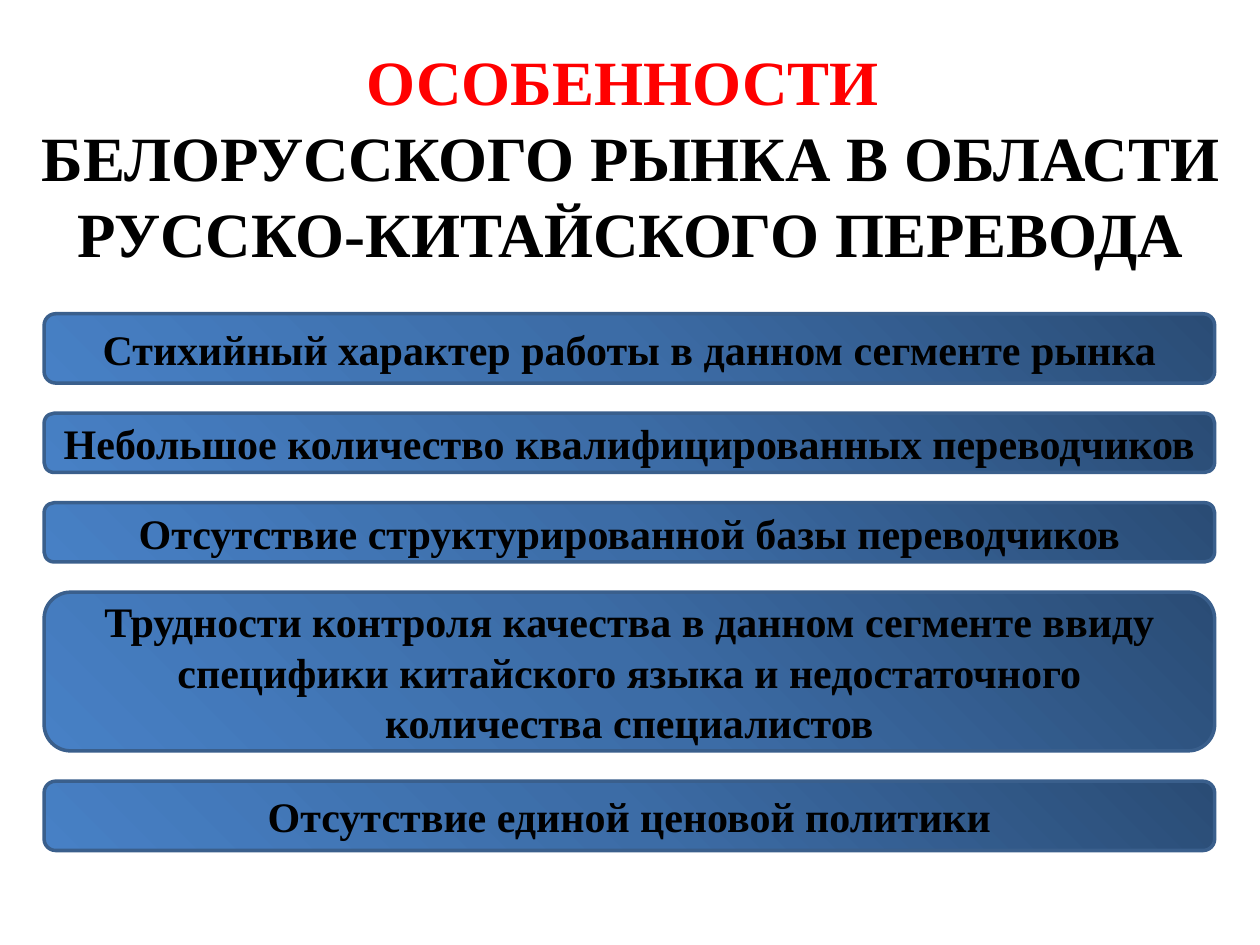
import dataclasses

import lxml.etree
import pptx
import pptx.dml.color
import pptx.enum.shapes
import pptx.enum.text
import pptx.oxml.ns
import pptx.util
from pptx.util import Inches


@dataclasses.dataclass(frozen=True)
class Theme:
    """Colours, font and type sizes of the slide."""
    font: str = "Times New Roman"
    title_size: int = 36
    bar_size: int = 24
    accent: str = "FF0000"
    ink: str = "000000"
    outline: str = "3A5F8C"
    outline_width: int = 2
    gradient: tuple = ((0, "2A4C75"), (50, "3C6CA6"), (100, "4780C5"))


THEME = Theme()
BAR_GAP = Inches(0.24)
TITLE_LINES = (
    ("ОСОБЕННОСТИ ", THEME.accent),
    ("БЕЛОРУССКОГО РЫНКА В ОБЛАСТИ", THEME.ink),
    ("РУССКО-КИТАЙСКОГО ПЕРЕВОДА", THEME.ink),
)
FEATURES = (
    ("Стихийный характер работы в данном сегменте рынка", Inches(0.55)),
    ("Небольшое количество квалифицированных переводчиков", Inches(0.47)),
    ("Отсутствие структурированной базы переводчиков", Inches(0.47)),
    ("Трудности контроля качества в данном сегменте ввиду специфики "
     "китайского языка и недостаточного количества специалистов", Inches(1.26)),
    ("Отсутствие единой ценовой политики", Inches(0.55)),
)


def rgb(colour):
    """Turn a hex string into a colour value."""
    return pptx.dml.color.RGBColor.from_string(colour)


def add_span(para, text, size, colour):
    """Add one bold run to a centred paragraph."""
    para.alignment = pptx.enum.text.PP_ALIGN.CENTER
    span = para.add_run()
    span.text = text
    span.font.name = THEME.font
    span.font.size = pptx.util.Pt(size)
    span.font.bold = True
    span.font.color.rgb = rgb(colour)


def fill_from_corner(shape):
    """Fill a shape with a radial gradient centred on its top right corner."""
    qn = pptx.oxml.ns.qn
    add = lxml.etree.SubElement
    shape.fill.gradient()
    gradient = shape.element.spPr.find(qn("a:gradFill"))
    for child in list(gradient):
        gradient.remove(child)
    stops = add(gradient, qn("a:gsLst"))
    for position, colour in THEME.gradient:
        stop = add(stops, qn("a:gs"), pos=str(position * 1000))
        add(stop, qn("a:srgbClr"), val=colour)
    circle = add(gradient, qn("a:path"), path="circle")
    add(circle, qn("a:fillToRect"), l="100000", b="100000")


def place_title(page, left, top, width, height):
    """Move the title placeholder into the box and write its lines."""
    title = page.shapes.title
    title.left, title.top, title.width, title.height = left, top, width, height
    frame = title.text_frame
    frame.word_wrap = True
    frame.auto_size = pptx.enum.text.MSO_AUTO_SIZE.NONE
    frame.vertical_anchor = pptx.enum.text.MSO_ANCHOR.TOP
    for index, (text, colour) in enumerate(TITLE_LINES):
        para = frame.add_paragraph() if index else frame.paragraphs[0]
        add_span(para, text, THEME.title_size, colour)


def add_bar(page, left, top, width, height, text):
    """Draw one rounded bar with its centred text."""
    bar = page.shapes.add_shape(
        pptx.enum.shapes.MSO_SHAPE.ROUNDED_RECTANGLE, left, top, width, height)
    bar.shadow.inherit = False
    fill_from_corner(bar)
    bar.line.color.rgb = rgb(THEME.outline)
    bar.line.width = pptx.util.Pt(THEME.outline_width)
    frame = bar.text_frame
    frame.word_wrap = True
    frame.vertical_anchor = pptx.enum.text.MSO_ANCHOR.MIDDLE
    add_span(frame.paragraphs[0], text, THEME.bar_size, THEME.ink)


def place_features(page, left, top, width):
    """Stack the bars downwards with equal gaps."""
    for text, height in FEATURES:
        add_bar(page, left, top, width, height, text)
        top += height + BAR_GAP


def main():
    """Build the slide and save the deck."""
    deck = pptx.Presentation()
    deck.slide_width, deck.slide_height = Inches(10), Inches(7.5)
    page = deck.slides.add_slide(deck.slide_layouts.get_by_name("Title Only"))
    place_title(page, Inches(0.2), Inches(0.29), Inches(9.61), Inches(1.92))
    place_features(page, Inches(0.35), Inches(2.49), Inches(9.29))
    deck.save("out.pptx")


if __name__ == "__main__":
    main()
